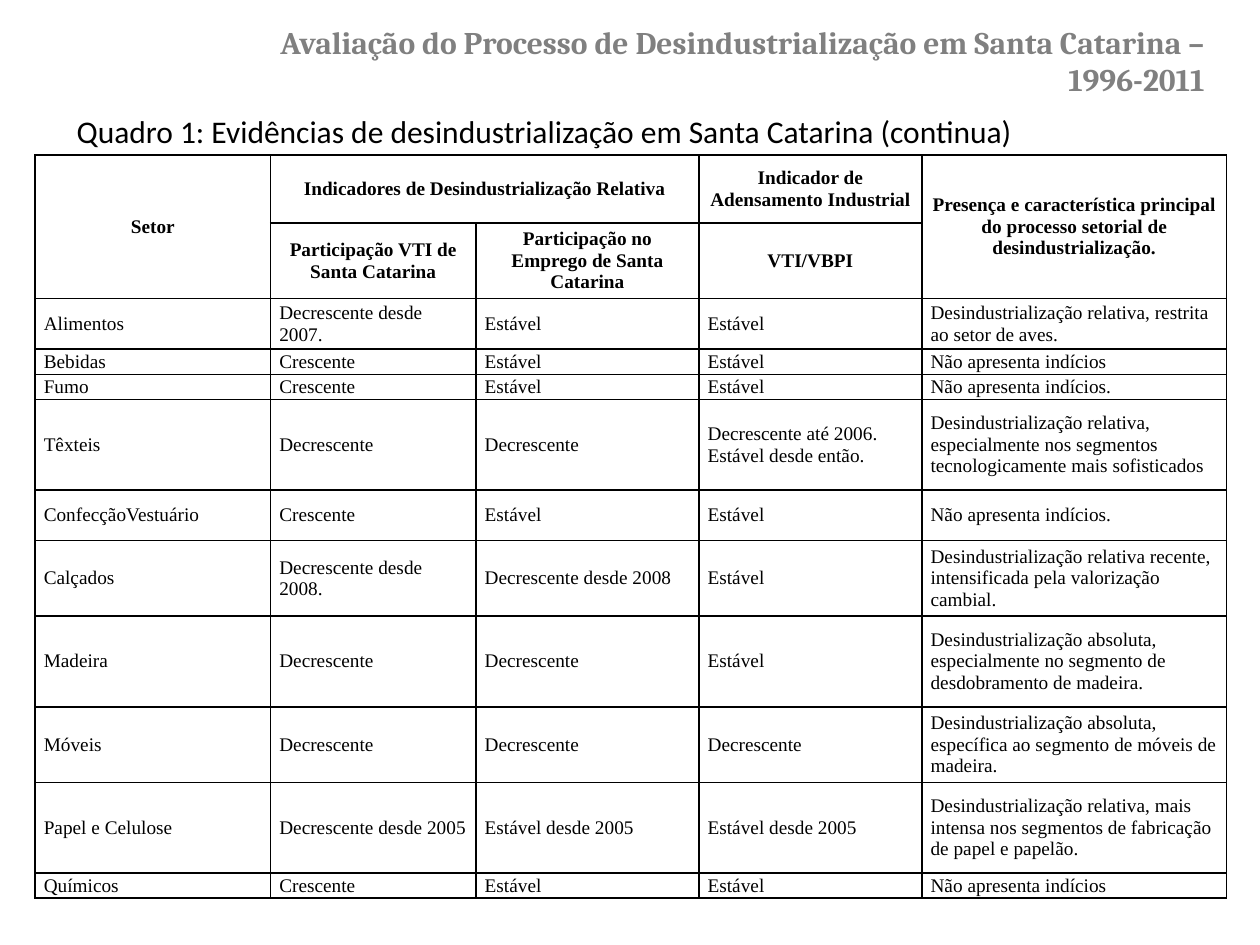
"""Build the slide on evidence of deindustrialization in Santa Catarina."""
from lxml.etree import SubElement
from pptx import Presentation
from pptx.dml.color import RGBColor
from pptx.enum.text import MSO_ANCHOR as Anchor, PP_ALIGN as Align
from pptx.oxml.ns import qn
from pptx.util import Pt

COLORS = {"title": "808080", "text": "000000", "border": "000000"}
TITLE = "Avaliação do Processo de Desindustrialização em Santa Catarina – 1996-2011"
CAPTION = "Quadro 1: Evidências de desindustrialização em Santa Catarina (continua)"
HEADERS = [
    ("Setor", "Indicadores de Desindustrialização Relativa", "",
     "Indicador de Adensamento Industrial",
     "Presença e característica principal do processo setorial de desindustrialização."),
    ("", "Participação VTI de Santa Catarina",
     "Participação no Emprego de Santa Catarina", "VTI/VBPI", ""),
]
SECTORS = [
    ("Alimentos", "Decrescente desde 2007.", "Estável", "Estável",
     "Desindustrialização relativa, restrita ao setor de aves."),
    ("Bebidas", "Crescente", "Estável", "Estável", "Não apresenta indícios"),
    ("Fumo", "Crescente", "Estável", "Estável", "Não apresenta indícios."),
    ("Têxteis", "Decrescente", "Decrescente",
     "Decrescente até 2006. Estável desde então.",
     "Desindustrialização relativa, especialmente nos segmentos "
     "tecnologicamente mais sofisticados"),
    ("ConfecçãoVestuário", "Crescente", "Estável", "Estável", "Não apresenta indícios."),
    ("Calçados", "Decrescente desde 2008.", "Decrescente desde 2008", "Estável",
     "Desindustrialização relativa recente, intensificada pela valorização cambial."),
    ("Madeira", "Decrescente", "Decrescente", "Estável",
     "Desindustrialização absoluta, especialmente no segmento de "
     "desdobramento de madeira."),
    ("Móveis", "Decrescente", "Decrescente", "Decrescente",
     "Desindustrialização absoluta, específica ao segmento de móveis de madeira."),
    ("Papel e Celulose", "Decrescente desde 2005", "Estável desde 2005",
     "Estável desde 2005",
     "Desindustrialização relativa, mais intensa nos segmentos de "
     "fabricação de papel e papelão."),
    ("Químicos", "Crescente", "Estável", "Estável", "Não apresenta indícios"),
]
MERGES = [((0, 0), (1, 0)), ((0, 1), (0, 2)), ((0, 4), (1, 4))]
WIDTHS = [134.6, 117.4, 127.4, 127.4, 174.2]
HEIGHTS = [38.9, 43.2, 28.8, 14.4, 14.4, 51.8, 28.8, 43.2, 51.8, 43.2, 51.8, 14.4]
TABLE_LEFT, TABLE_TOP = 20, 88.6
CELL_FORMAT = {"margin_left": Pt(5), "margin_right": Pt(5), "margin_top": 0,
               "margin_bottom": 0, "vertical_anchor": Anchor.MIDDLE}
TITLE_FONT = {"name": "Cambria", "size": Pt(18), "bold": True}
CAPTION_FONT = {"name": "Calibri", "size": Pt(18), "bold": False}
HEADER_FONT = {"name": "Times New Roman", "size": Pt(11), "bold": True}
SECTOR_FONT = {**HEADER_FONT, "bold": False}


def apply(target, values):
    for name, value in values.items():
        setattr(target, name, value)


def write(frame, words, font, color, align):
    paragraph = frame.paragraphs[0]
    paragraph.alignment = align
    run = paragraph.add_run()
    run.text = words
    apply(run.font, font)
    run.font.color.rgb = RGBColor.from_string(COLORS[color])


def add_text(slide, box, words, font, color, align, anchor):
    frame = slide.shapes.add_textbox(*map(Pt, box)).text_frame
    apply(frame, {"word_wrap": True, "vertical_anchor": anchor})
    write(frame, words, font, color, align)


def add_borders(cell):
    properties = cell._tc.get_or_add_tcPr()
    for side in ("lnL", "lnR", "lnT", "lnB"):
        line = SubElement(properties, qn(f"a:{side}"), w=str(Pt(1)))
        fill = SubElement(line, qn("a:solidFill"))
        SubElement(fill, qn("a:srgbClr"), val=COLORS["border"])


def add_evidence_table(slide):
    rows = HEADERS + SECTORS
    box = (TABLE_LEFT, TABLE_TOP, sum(WIDTHS), sum(HEIGHTS))
    table = slide.shapes.add_table(len(rows), len(WIDTHS), *map(Pt, box)).table
    apply(table, {"first_row": False, "horz_banding": False})
    for column, width in zip(table.columns, WIDTHS):
        column.width = Pt(width)
    for row, height in zip(table.rows, HEIGHTS):
        row.height = Pt(height)
    for start, end in MERGES:
        table.cell(*start).merge(table.cell(*end))
    for r, entries in enumerate(rows):
        is_header = r < len(HEADERS)
        font = HEADER_FONT if is_header else SECTOR_FONT
        align = Align.CENTER if is_header else Align.LEFT
        for c, words in enumerate(entries):
            cell = table.cell(r, c)
            apply(cell, CELL_FORMAT)
            add_borders(cell)
            cell.fill.background()
            if words:
                write(cell.text_frame, words, font, "text", align)


def main():
    deck = Presentation()
    apply(deck, {"slide_width": Pt(720), "slide_height": Pt(540)})
    slide = deck.slides.add_slide(deck.slide_layouts[6])
    add_text(slide, (150.5, 15, 545, 39), TITLE, TITLE_FONT, "title",
             Align.RIGHT, Anchor.MIDDLE)
    add_text(slide, (36.7, 60.5, 657.4, 28.8), CAPTION, CAPTION_FONT, "text",
             Align.LEFT, Anchor.TOP)
    add_evidence_table(slide)
    deck.save("out.pptx")


if __name__ == "__main__":
    main()
